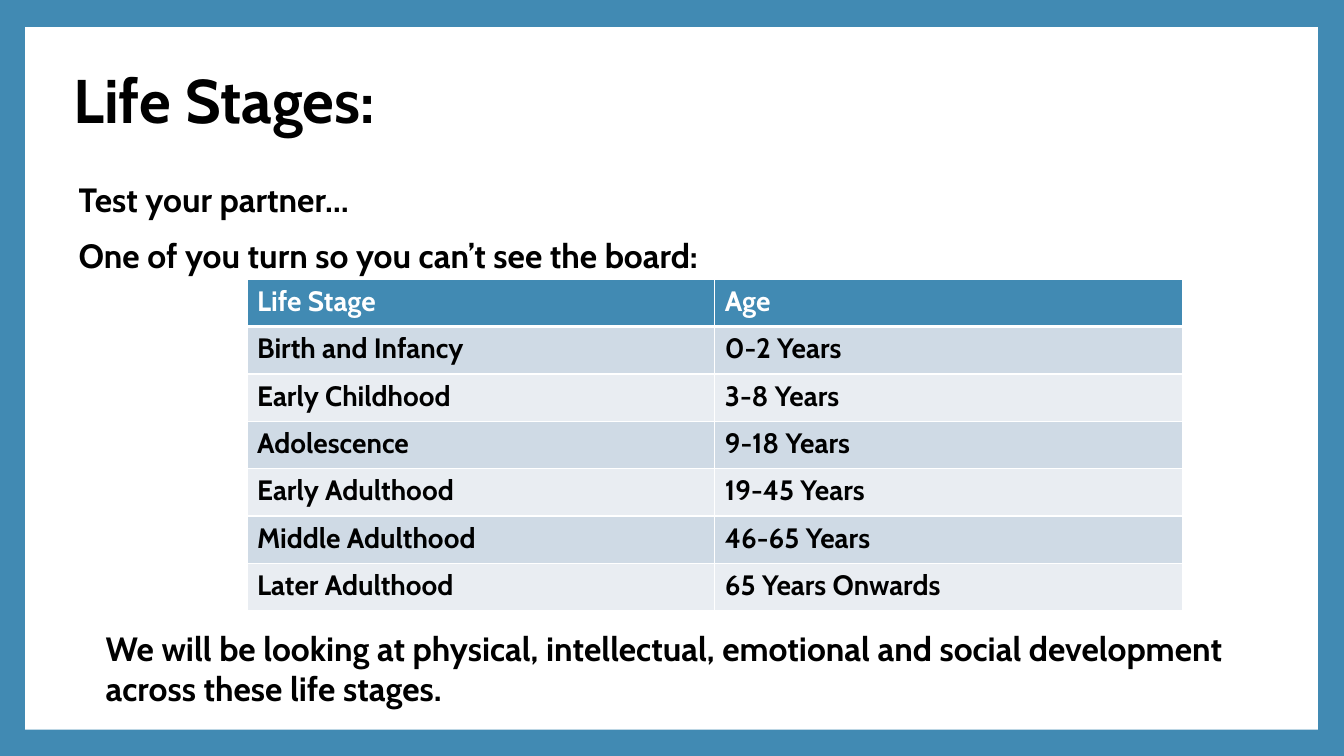
"""Build the Life Stages slide with its table of ages."""
from lxml import etree
from pptx import Presentation
from pptx.dml.color import RGBColor
from pptx.enum.shapes import MSO_SHAPE
from pptx.enum.text import MSO_ANCHOR
from pptx.oxml.ns import qn
from pptx.util import Inches, Pt

TITLE = ["Life Stages:"]
TASKS = ["Test your partner…", "One of you turn so you can’t see the board:"]
CLOSING = ["We will be looking at physical, intellectual, emotional and social "
           "development across these life stages."]
STAGES = [
    ("Life Stage", "Age"),
    ("Birth and Infancy", "0-2 Years"),
    ("Early Childhood", "3-8 Years"),
    ("Adolescence", "9-18 Years"),
    ("Early Adulthood", "19-45 Years"),
    ("Middle Adulthood", "46-65 Years"),
    ("Later Adulthood", "65 Years Onwards"),
]

FONT = "Cabin"
BLUE = RGBColor(0x41, 0x8A, 0xB3)
WHITE = RGBColor(0xFF, 0xFF, 0xFF)
BLACK = RGBColor(0, 0, 0)
BANDS = [RGBColor(0xE9, 0xED, 0xF2), RGBColor(0xCF, 0xDA, 0xE5)]
RECT = MSO_SHAPE.RECTANGLE
MIDDLE = MSO_ANCHOR.MIDDLE
COL_W, ROW_H = 4.64, 0.47


def add_run(para, text, size, color):
    run = para.add_run()
    run.text = text
    font = run.font
    font.name, font.size, font.bold = FONT, Pt(size), True
    font.color.rgb = color


def add_text(slide, box, lines, size, spacing=1.0, before=0):
    frame = slide.shapes.add_textbox(*map(Inches, box)).text_frame
    frame.word_wrap = True
    for i, line in enumerate(lines):
        para = frame.add_paragraph() if i else frame.paragraphs[0]
        para.line_spacing = spacing
        para.space_before = Pt(before)
        add_run(para, line, size, BLACK)
    return frame


def add_border(cell, side, width):
    props = cell._tc.get_or_add_tcPr()
    line = etree.SubElement(props, qn("a:ln" + side), w=str(Pt(width)))
    fill = etree.SubElement(line, qn("a:solidFill"))
    etree.SubElement(fill, qn("a:srgbClr"), val=str(WHITE))


def add_stages(slide):
    rows, cols = len(STAGES), len(STAGES[0])
    size = Inches(COL_W * cols), Inches(ROW_H * rows)
    table = slide.shapes.add_table(rows, cols, Inches(2.45), Inches(2.77), *size).table
    for col in table.columns:
        col.width = Inches(COL_W)
    for r, stage in enumerate(STAGES):
        table.rows[r].height = Inches(ROW_H)
        for c, text in enumerate(stage):
            cell = table.cell(r, c)
            for side in "LRTB":
                heavy = (r, side) in ((0, "B"), (1, "T"))
                add_border(cell, side, 3 if heavy else 1)
            cell.fill.solid()
            cell.fill.fore_color.rgb = BANDS[r % 2] if r else BLUE
            add_run(cell.text_frame.paragraphs[0], text, 20, BLACK if r else WHITE)


def main():
    deck = Presentation()
    deck.slide_width, deck.slide_height = Inches(13.33), Inches(7.5)
    slide = deck.slides.add_slide(deck.slide_layouts[6])
    back = slide.background.fill
    back.solid()
    back.fore_color.rgb = BLUE

    panel = slide.shapes.add_shape(RECT, *map(Inches, (0.25, 0.27, 12.82, 6.97)))
    panel.shadow.inherit = False
    panel.fill.solid()
    panel.fill.fore_color.rgb = WHITE
    panel.line.fill.background()

    title = add_text(slide, (0.63, 0.29, 10.8, 1.48), TITLE, 44, 0.9)
    title.vertical_anchor = MIDDLE
    tasks = add_text(slide, (0.63, 1.77, 11.81, 5.5), TASKS, 24, 0.9, 14)
    tasks.margin_left = Inches(0.15)
    add_stages(slide)
    add_text(slide, (0.95, 6.18, 12.03, 0.91), CLOSING, 24)
    deck.save("out.pptx")


if __name__ == "__main__":
    main()
